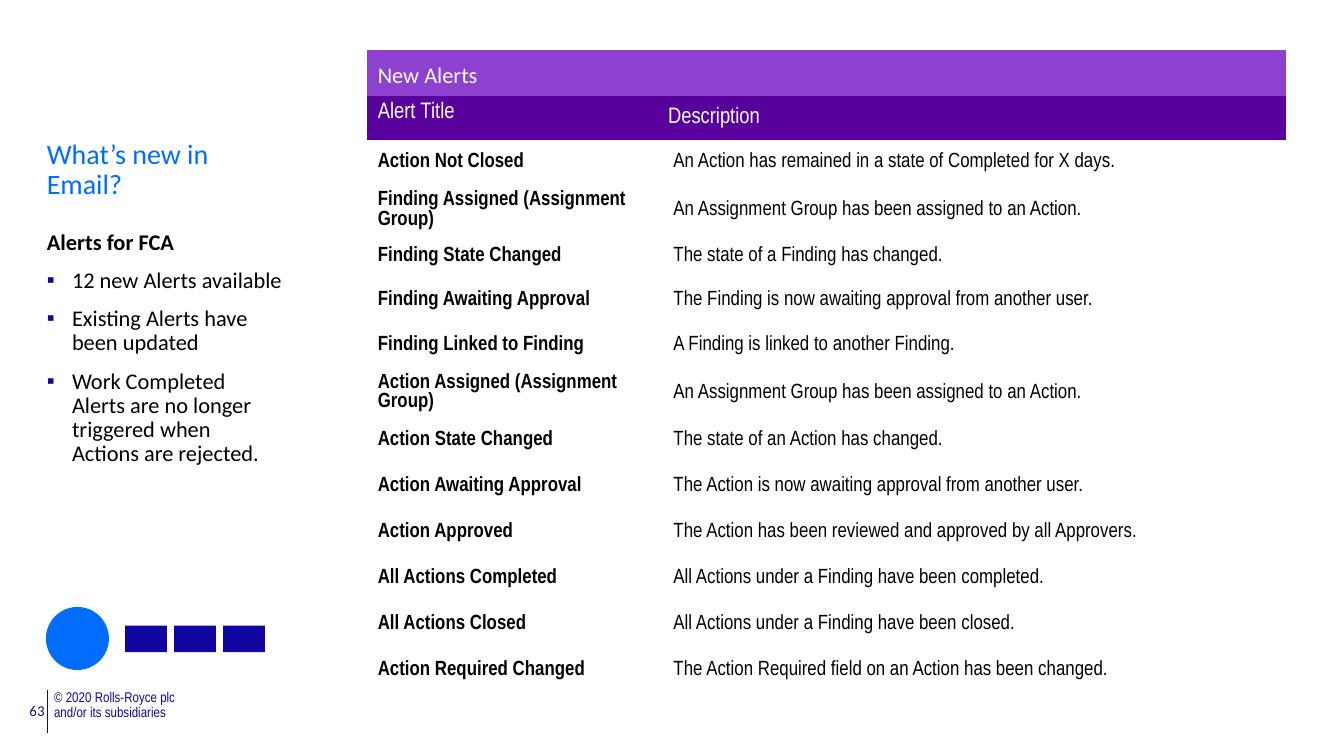
from lxml import etree
from pptx import Presentation
from pptx.dml.color import RGBColor
from pptx.enum import shapes, text
from pptx.oxml.ns import qn
from pptx.util import Pt

TITLE = "What’s new in Email?"
SUBTITLE = "Alerts for FCA"
POINTS = [
    "12 new Alerts available",
    "Existing Alerts have been updated",
    "Work Completed Alerts are no longer triggered when Actions are rejected.",
]
COPYRIGHT = ["© 2020 Rolls-Royce plc", "and/or its subsidiaries"]
PAGE_NUMBER = "63"
TABLE_TITLE = "New Alerts"
HEADINGS = ("Alert Title", "Description")
ALERTS = [
    ("Action Not Closed", "An Action has remained in a state of Completed for X days."),
    ("Finding Assigned (Assignment Group)", "An Assignment Group has been assigned to an Action."),
    ("Finding State Changed", "The state of a Finding has changed."),
    ("Finding Awaiting Approval", "The Finding is now awaiting approval from another user."),
    ("Finding Linked to Finding", "A Finding is linked to another Finding."),
    ("Action Assigned (Assignment Group)", "An Assignment Group has been assigned to an Action."),
    ("Action State Changed", "The state of an Action has changed."),
    ("Action Awaiting Approval", "The Action is now awaiting approval from another user."),
    ("Action Approved", "The Action has been reviewed and approved by all Approvers."),
    ("All Actions Completed", "All Actions under a Finding have been completed."),
    ("All Actions Closed", "All Actions under a Finding have been closed."),
    ("Action Required Changed", "The Action Required field on an Action has been changed."),
]

THEME = {
    "blue": RGBColor.from_string("006DFF"),
    "navy": RGBColor.from_string("10069F"),
    "violet": RGBColor.from_string("8E40CF"),
    "purple": RGBColor.from_string("58009C"),
    "black": RGBColor.from_string("000000"),
    "white": RGBColor.from_string("FFFFFF"),
    "sans": "Calibri",
    "narrow": "Arial Narrow",
    "title": 15,
    "body": 12,
    "cell": 11,
    "number": 8,
    "small": 7.5,
}
NO_TABLE_STYLE = "{2D5ABB26-0587-4C30-8999-92F81FD0307C}"
COLUMN_WIDTHS = (158.4, 334.1)
ROW_HEIGHTS = [24.6, 23.2, 24.6, 25.2, 23.2, 23.6, 24.6, 26.2] + [24.6] * 6


def apply(target, values):
    for name, value in values.items():
        setattr(target, name, value)


def write(paragraph, words, face, size, color, bold=False, **layout):
    apply(paragraph, layout)
    span = paragraph.add_run()
    span.text = words
    apply(span.font, {"name": THEME[face], "size": Pt(THEME[size]), "bold": bold})
    span.font.color.rgb = THEME[color]


def add_box(page, left, top, width, height, inset=(7.2, 3.6)):
    frame = page.shapes.add_textbox(Pt(left), Pt(top), Pt(width), Pt(height)).text_frame
    across, down = map(Pt, inset)
    apply(frame, {"word_wrap": True, "margin_left": across, "margin_right": across,
                  "margin_top": down, "margin_bottom": down})
    return frame


def add_bullet(paragraph):
    properties = paragraph._p.get_or_add_pPr()
    properties.set("marL", str(Pt(13.5)))
    properties.set("indent", str(-Pt(13.5)))
    color = etree.SubElement(properties, qn("a:buClr"))
    etree.SubElement(color, qn("a:srgbClr"), val=str(THEME["navy"]))
    etree.SubElement(properties, qn("a:buFont"), typeface="Arial")
    etree.SubElement(properties, qn("a:buChar"), char="▪")


def add_block(page, kind, color, left, top, width, height):
    block = page.shapes.add_shape(kind, Pt(left), Pt(top), Pt(width), Pt(height))
    block.shadow.inherit = False
    block.fill.solid()
    block.fill.fore_color.rgb = THEME[color]
    block.line.fill.background()


def add_footer(page):
    rule = page.shapes.add_connector(
        shapes.MSO_CONNECTOR.STRAIGHT, Pt(25.4), Pt(369.7), Pt(25.4), Pt(392.7))
    rule.line.color.rgb = THEME["navy"]
    rule.line.width = Pt(0.5)
    etree.SubElement(rule._element.spPr, qn("a:effectLst"))

    frame = add_box(page, 29, 369.7, 160, 24.5, inset=(0, 0))
    for index, line in enumerate(COPYRIGHT):
        paragraph = frame.add_paragraph() if index else frame.paragraphs[0]
        write(paragraph, line, "narrow", "small", "navy", line_spacing=0.9)
    frame = add_box(page, 3.6, 372.2, 27.4, 17.3)
    write(frame.paragraphs[0], PAGE_NUMBER, "sans", "number", "navy",
          alignment=text.PP_ALIGN.RIGHT)

    add_block(page, shapes.MSO_SHAPE.OVAL, "blue", 24.6, 325.2, 33.8, 33.8)
    for index in range(3):
        add_block(page, shapes.MSO_SHAPE.RECTANGLE, "navy",
                  67 + 26.25 * index, 335.2, 22.5, 14.3)


def add_summary(page):
    frame = add_box(page, 18, 71.5, 140.4, 43.2)
    write(frame.paragraphs[0], TITLE, "sans", "title", "blue", line_spacing=0.9)
    frame = add_box(page, 18, 120.2, 140.4, 205.2)
    write(frame.paragraphs[0], SUBTITLE, "sans", "body", "black", True, line_spacing=0.9)
    for point in POINTS:
        paragraph = frame.add_paragraph()
        apply(paragraph, {"line_spacing": 0.9, "space_before": Pt(7.5)})
        add_bullet(paragraph)
        write(paragraph, point, "sans", "body", "black")


def fill_cell(cell, words, face, size, color, fill=None, bold=False, **layout):
    margins = {"margin_left": Pt(5.8), "margin_right": Pt(2.9),
               "margin_top": Pt(2.9), "margin_bottom": Pt(2.9),
               "vertical_anchor": text.MSO_ANCHOR.MIDDLE}
    apply(cell, {**margins, **layout})
    if fill:
        cell.fill.solid()
        cell.fill.fore_color.rgb = THEME[fill]
    else:
        cell.fill.background()
    write(cell.text_frame.paragraphs[0], words, face, size, color, bold)


def add_alert_table(page):
    table = page.shapes.add_table(
        len(ROW_HEIGHTS), len(COLUMN_WIDTHS), Pt(196.6), Pt(27),
        Pt(sum(COLUMN_WIDTHS)), Pt(sum(ROW_HEIGHTS))).table
    apply(table, {"first_row": False, "horz_banding": False})
    table._tbl.tblPr.find(qn("a:tableStyleId")).text = NO_TABLE_STYLE
    for column, width in zip(table.columns, COLUMN_WIDTHS):
        column.width = Pt(width)
    for row, height in zip(table.rows, ROW_HEIGHTS):
        row.height = Pt(height)

    table.cell(0, 0).merge(table.cell(0, 1))
    fill_cell(table.cell(0, 0), TABLE_TITLE, "sans", "body", "white", "violet",
              margin_top=Pt(5.8))
    layouts = ({"vertical_anchor": text.MSO_ANCHOR.TOP}, {"margin_left": Pt(2.9)})
    for column, (heading, layout) in enumerate(zip(HEADINGS, layouts)):
        fill_cell(table.cell(1, column), heading, "narrow", "body", "white", "purple", **layout)
    for row, alert in enumerate(ALERTS, start=2):
        for column, words in enumerate(alert):
            fill_cell(table.cell(row, column), words, "narrow", "cell", "black",
                      bold=column == 0, margin_top=0, margin_bottom=0)


def main():
    deck = Presentation()
    apply(deck, {"slide_width": Pt(720), "slide_height": Pt(405)})
    page = deck.slides.add_slide(deck.slide_layouts[6])
    add_footer(page)
    add_summary(page)
    add_alert_table(page)
    deck.save("out.pptx")


if __name__ == "__main__":
    main()
